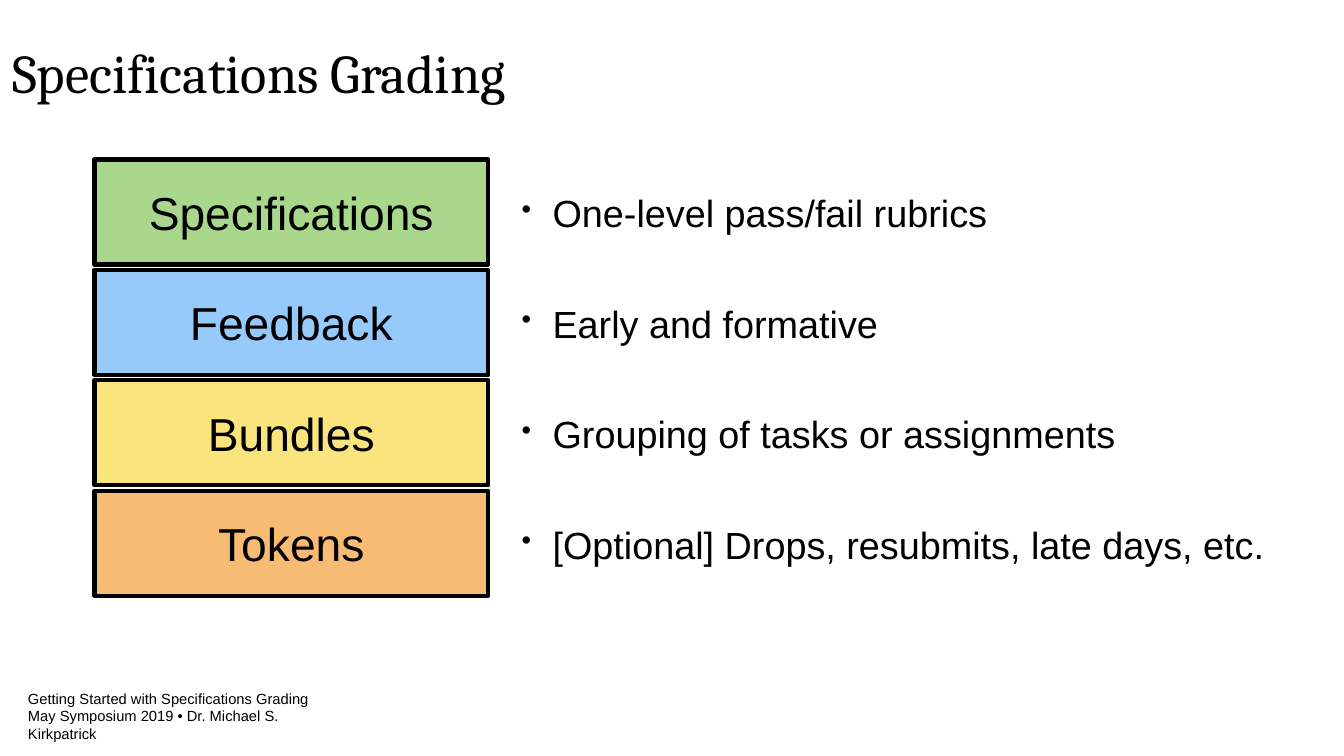
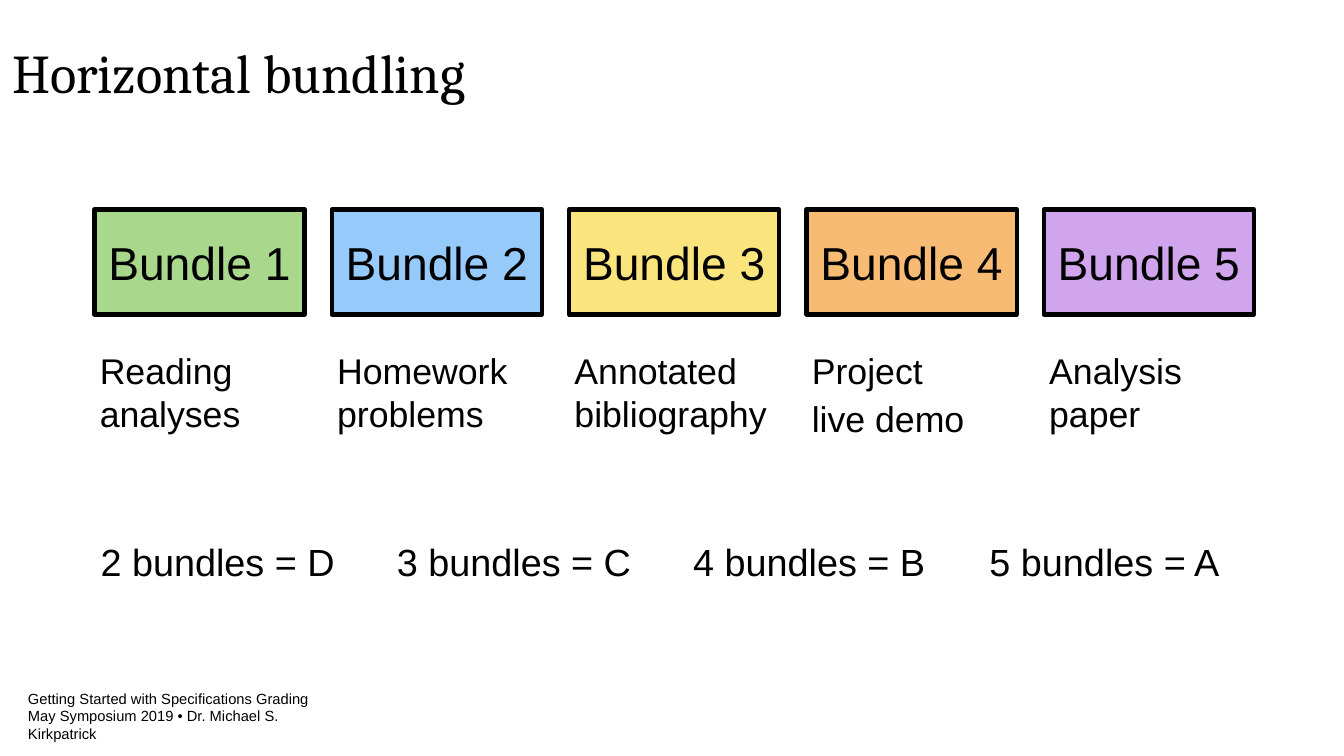
"""Builds two slides on specifications grading."""
from dataclasses import dataclass

from lxml.etree import SubElement as Sub
from pptx import Presentation
from pptx.dml.color import RGBColor as Rgb
from pptx.enum.shapes import MSO_SHAPE as Kind
from pptx.enum.text import MSO_ANCHOR as Anchor, MSO_AUTO_SIZE as Auto, PP_ALIGN as Align
from pptx.oxml.ns import qn
from pptx.util import Inches as In, Pt

FOOT = "Getting Started with Specifications Grading\nMay Symposium 2019 • Dr. Michael S. Kirkpatrick"
PARTS = [
    ("Specifications", "One-level pass/fail rubrics"),
    ("Feedback", "Early and formative"),
    ("Bundles", "Grouping of tasks or assignments"),
    ("Tokens", "[Optional] Drops, resubmits, late days, etc."),
]
TASKS = ["Reading analyses", "Homework problems", "Annotated bibliography",
         "Project\nlive demo", "Analysis paper"]
GRADES = ["2 bundles = D", "3 bundles = C", "4 bundles = B", "5 bundles = A"]


@dataclass(frozen=True)
class Theme:
    """Holds colours, fonts, type sizes and the shared grid."""
    ink: str = "000000"
    fills: tuple = ("70BF41", "51A8F9", "F5D328", "F38F18", "B36AE1")
    alpha: int = 60
    head: str = "Cambria"
    body: str = "Arial"
    title: int = 52
    label: int = 44
    text: int = 36
    note: int = 34
    foot: int = 14
    rule: int = 4
    inset: float = 0.04
    left: float = 1.25
    tall: float = 1.39
    row: float = 1.46
    col: float = 3.14


T = Theme()


def write(shape, text, size, face=T.body, mid=True, align=Align.LEFT, gap=0):
    """Fills a shape with styled text."""
    frame = shape.text_frame
    frame.text = text
    frame.word_wrap = True
    frame.vertical_anchor = Anchor.MIDDLE if mid else Anchor.TOP
    frame.margin_left = frame.margin_right = In(T.inset)
    frame.margin_top = frame.margin_bottom = In(T.inset)
    for num, para in enumerate(frame.paragraphs):
        para.alignment = align
        if num and gap:
            para.space_before = Pt(gap)
        for run in para.runs:
            run.font.name, run.font.size = face, Pt(size)
            run.font.color.rgb = Rgb.from_string(T.ink)
    return frame


def box(slide, spot, text, size, **style):
    """Adds a text box."""
    return write(slide.shapes.add_textbox(*map(In, spot)), text, size, **style)


def card(slide, spot, text, tint):
    """Adds a tinted, outlined label."""
    shape = slide.shapes.add_shape(Kind.RECTANGLE, *map(In, spot))
    shape.shadow.inherit = False
    shape.fill.solid()
    shape.fill.fore_color.rgb = Rgb.from_string(tint)
    clr = next(shape.fill._xPr.iter(qn("a:srgbClr")))
    Sub(clr, qn("a:alpha"), val=str(T.alpha * 1000))
    shape.line.color.rgb = Rgb.from_string(T.ink)
    shape.line.width = Pt(T.rule)
    write(shape, text, T.label, align=Align.CENTER)


def bullet(para):
    """Gives a paragraph a hanging dot."""
    props = para._p.get_or_add_pPr()
    props.set("marL", str(In(0.41)))
    props.set("indent", str(-In(0.41)))
    Sub(props, qn("a:buSzPct"), val="75000")
    Sub(props, qn("a:buChar"), char="•")


def tabs(para, step, count):
    """Sets equal tab stops."""
    stops = Sub(para._p.get_or_add_pPr(), qn("a:tabLst"))
    for num in range(1, count + 1):
        Sub(stops, qn("a:tab"), pos=str(In(step * num)), algn="l")


def start(deck, title):
    """Adds a slide with its title and footer."""
    slide = deck.slides.add_slide(deck.slide_layouts[6])
    foot = box(slide, (0.33, 9.17, 4.36, 0.6), FOOT, T.foot)
    foot.word_wrap = False
    foot.auto_size = Auto.SHAPE_TO_FIT_TEXT
    box(slide, (0.12, 0.4, 11.31, 1.1), title, T.title, face=T.head)
    return slide


def stack(deck):
    """Draws the four parts as rows."""
    slide = start(deck, "Specifications Grading")
    for num, (name, text) in enumerate(PARTS):
        top = 2.11 + T.row * num
        card(slide, (T.left, top, 5.21, T.tall), name, T.fills[num])
        frame = box(slide, (6.86, top + 0.26, 10.39, 0.89), text, T.text)
        bullet(frame.paragraphs[0])


def spread(deck):
    """Draws the five bundles as columns."""
    slide = start(deck, "Horizontal bundling")
    for num, task in enumerate(TASKS):
        left = T.left + T.col * num
        card(slide, (left, 2.77, 2.78, T.tall), f"Bundle {num + 1}", T.fills[num])
        box(slide, (left + 0.03, 4.57, 2.8, 1.35), task, T.note, mid=False, gap=5)
    frame = box(slide, (1.29, 7.08, 15.37, 0.92), "\t".join(GRADES), T.text, mid=False)
    tabs(frame.paragraphs[0], 3.92, len(GRADES) - 1)


def main():
    """Builds and saves the deck."""
    deck = Presentation()
    deck.slide_width, deck.slide_height = In(17.78), In(10)
    stack(deck)
    spread(deck)
    deck.save("out.pptx")


if __name__ == "__main__":
    main()
